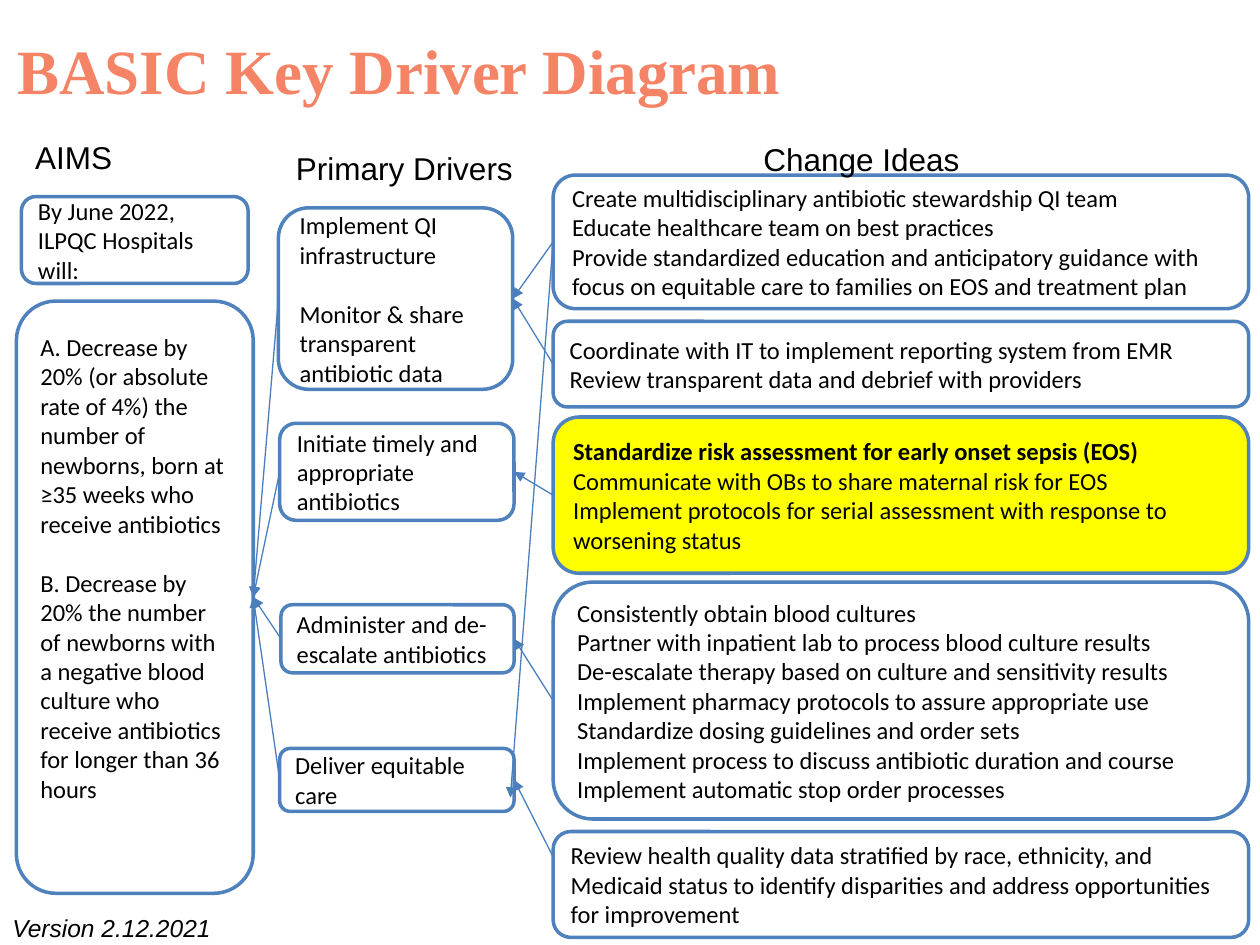
from pptx import Presentation
from pptx.dml.color import RGBColor
from pptx.enum.shapes import MSO_CONNECTOR, MSO_SHAPE
from pptx.enum.text import MSO_ANCHOR, PP_ALIGN
from pptx.oxml.ns import qn
from pptx.util import Emu, Pt
from lxml.etree import SubElement

PX = 9144  # EMU per px, 100 px to the inch
LEFT, RIGHT = 1, 3  # connection sites of a rectangle
LINE_GAP = 17  # one 14 pt text line, in points


def rgb(value):
    return RGBColor.from_string(value)


def px(*values):
    return [Emu(v * PX) for v in values]


class Diagram:
    border, arrow, black = "4F81BD", "4B7EBC", "000000"

    def __init__(self, prs):
        self.s = prs.slides.add_slide(prs.slide_layouts[6])

    def text(self, box, text, size=18, font="Arial", color=black,
             bold=False, italic=False, anchor=MSO_ANCHOR.TOP):
        tf = self.s.shapes.add_textbox(*px(*box)).text_frame
        tf.word_wrap = True
        tf.vertical_anchor = anchor
        p = tf.paragraphs[0]
        p.text = text
        self.style(p, size, font, color, bold, italic)

    def style(self, p, size, font, color, bold=False, italic=False):
        f = p.font
        f.size, f.name, f.bold, f.italic = Pt(size), font, bold, italic
        f.color.rgb = rgb(color)

    def box(self, box, *lines, fill="FFFFFF", gap=0, bold_first=False, bottom=5):
        sp = self.s.shapes.add_shape(MSO_SHAPE.ROUNDED_RECTANGLE, *px(*box))
        sp.shadow.inherit = False
        if fill:
            sp.fill.solid()
            sp.fill.fore_color.rgb = rgb(fill)
        else:
            sp.fill.background()
        sp.line.color.rgb = rgb(self.border)
        sp.line.width = Pt(2)
        tf = sp.text_frame
        tf.word_wrap = True
        tf.vertical_anchor = MSO_ANCHOR.MIDDLE
        tf.margin_bottom = Emu(bottom * PX)
        for i, line in enumerate(lines):
            p = tf.add_paragraph() if i else tf.paragraphs[0]
            p.text = line
            p.alignment = PP_ALIGN.LEFT
            if i and gap:
                p.space_before = Pt(gap)
            self.style(p, 14, "Calibri", self.black, bold_first and i == 0)
        return sp

    def link(self, start, end):
        """Arrow from a box's left side to a box's right side; a tuple is a free point."""
        free = [e if isinstance(e, tuple) else (0, 0) for e in (start, end)]
        c = self.s.shapes.add_connector(MSO_CONNECTOR.STRAIGHT, *px(*free[0], *free[1]))
        if not isinstance(start, tuple):
            c.begin_connect(start, LEFT)
        if not isinstance(end, tuple):
            c.end_connect(end, RIGHT)
        c.line.color.rgb = rgb(self.arrow)
        c.line.width = Pt(0.75)
        SubElement(c.line._get_or_add_ln(), qn("a:tailEnd"), type="triangle")
        SubElement(c._element.spPr, qn("a:effectLst"))


def main():
    prs = Presentation()
    prs.slide_width, prs.slide_height = px(1000, 750)
    d = Diagram(prs)

    # Title
    d.text((4, 4, 900, 102), "BASIC Key Driver Diagram", 36, "Times New Roman",
           "F58466", bold=True, anchor=MSO_ANCHOR.MIDDLE)

    # Aims
    d.box((17, 156, 180, 69), "By June 2022, ILPQC Hospitals will:")
    aims = d.box(
        (13, 239, 188, 470),
        "A. Decrease by 20% (or absolute rate of 4%) the number of newborns, "
        "born at ≥35 weeks who receive antibiotics",
        "B. Decrease by 20% the number of newborns with a negative blood culture "
        "who receive antibiotics for longer than 36 hours",
        gap=LINE_GAP, bottom=52)

    # Primary drivers
    infrastructure = d.box((221, 165, 186, 144), "Implement QI infrastructure",
                           "Monitor & share transparent antibiotic data", gap=LINE_GAP)
    initiate = d.box((222, 336, 186, 77), "Initiate timely and appropriate antibiotics")
    administer = d.box((223, 480, 185, 54), "Administer and de-escalate antibiotics")
    equitable = d.box((222, 594, 186, 50), "Deliver equitable care")

    # Change ideas
    def idea(top, height, *lines, **options):
        return d.box((439, top, 552, height), *lines, **options)

    team = idea(
        139, 106,
        "Create multidisciplinary antibiotic stewardship QI team",
        "Educate healthcare team on best practices",
        "Provide standardized education and anticipatory guidance with focus on "
        "equitable care to families on EOS and treatment plan", fill=None)
    reporting = idea(
        255, 68,
        "Coordinate with IT to implement reporting system from EMR",
        "Review transparent data and debrief with providers")
    risk = idea(
        331, 124,
        "Standardize risk assessment for early onset sepsis (EOS)",
        "Communicate with OBs to share maternal risk for EOS",
        "Implement protocols for serial assessment with response to worsening status",
        fill="FFFF00", bold_first=True)
    cultures = idea(
        462, 188,
        "Consistently obtain blood cultures",
        "Partner with inpatient lab to process blood culture results",
        "De-escalate therapy based on culture and sensitivity results",
        "Implement pharmacy protocols to assure appropriate use",
        "Standardize dosing guidelines and order sets",
        "Implement process to discuss antibiotic duration and course",
        "Implement automatic stop order processes", fill=None)
    idea(
        660, 84,
        "Review health quality data stratified by race, ethnicity, and Medicaid status "
        "to identify disparities and address opportunities for improvement", fill=None)

    # Column headings and version
    for left, top, heading in ((18, 105, "AIMS"), (225, 113, "Primary Drivers"),
                               (596, 106, "Change Ideas")):
        d.text((left, top, 219, 40), heading)
    d.text((0, 720, 283, 34), "Version 2.12.2021", 14, italic=True)

    # Arrows from ideas to drivers, then from drivers to aims
    for start, end in ((team, infrastructure), (reporting, infrastructure),
                       (risk, initiate), (cultures, administer),
                       ((439, 680), equitable), (team, (405, 633))):
        d.link(start, end)
    for driver in (infrastructure, initiate, administer, equitable):
        d.link(driver, aims)

    prs.save("out.pptx")


if __name__ == "__main__":
    main()
